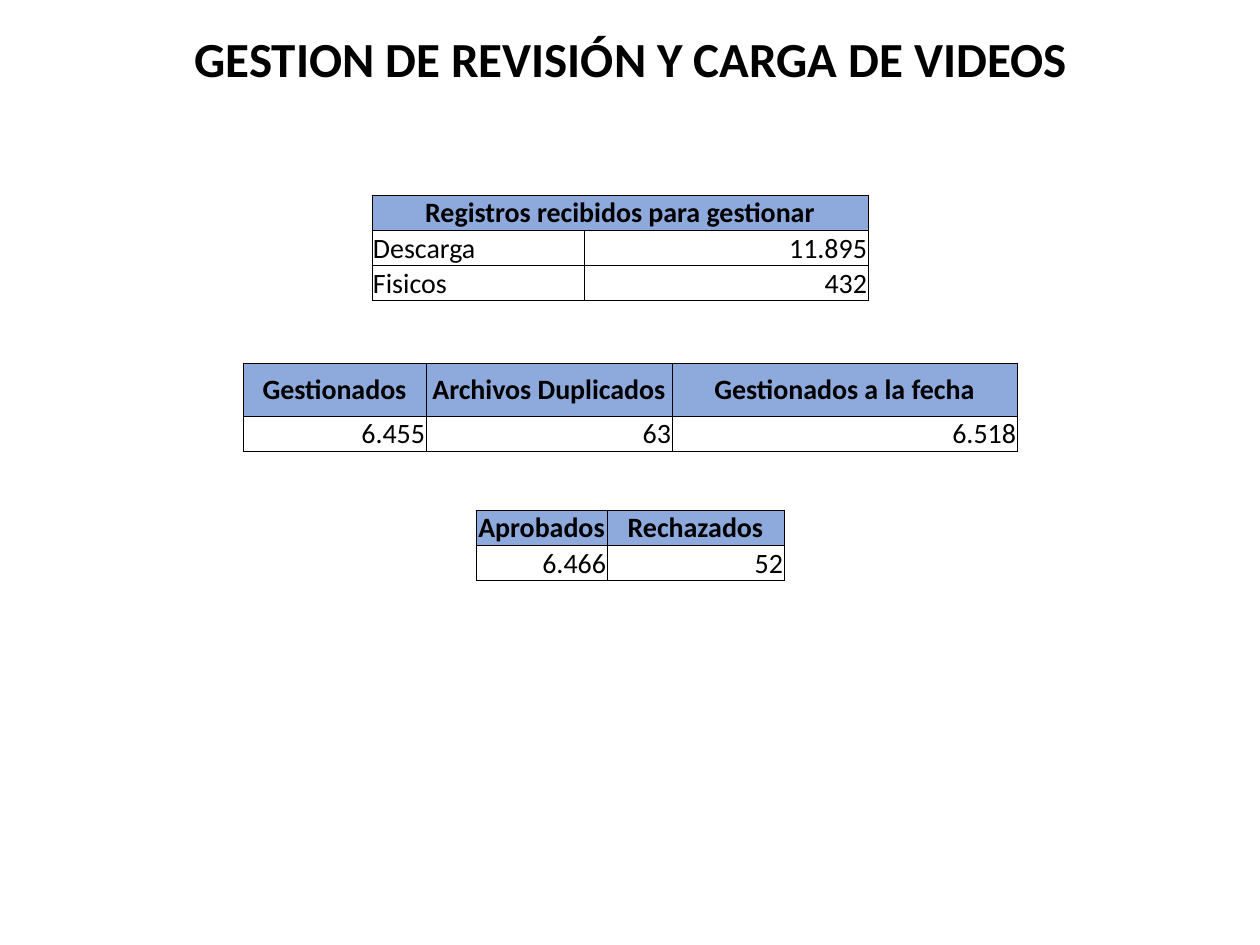
from lxml import etree
from pptx import Presentation
from pptx import util as u
from pptx.dml import color
from pptx.enum import text
from pptx.oxml import ns

FONT = "Calibri"
BLACK = "000000"
HEADER_BLUE = "8EA9DB"
LEFT, CENTER, RIGHT = text.PP_ALIGN.LEFT, text.PP_ALIGN.CENTER, text.PP_ALIGN.RIGHT
MIDDLE, BOTTOM = text.MSO_ANCHOR.MIDDLE, text.MSO_ANCHOR.BOTTOM


def px(length):
    return u.Emu(round(length * 914400 / 126))


def rgb(value):
    return color.RGBColor.from_string(value)


def style_para(para, align, size, bold):
    para.alignment = align
    para.font.name = FONT
    para.font.size = u.Pt(size)
    para.font.bold = bold
    para.font.color.rgb = rgb(BLACK)


def add_borders(cell):
    properties = cell._tc.get_or_add_tcPr()
    for index, side in enumerate(("lnL", "lnR", "lnT", "lnB")):
        line = etree.Element(ns.qn(f"a:{side}"), w=str(u.Pt(0.5)))
        fill = etree.SubElement(line, ns.qn("a:solidFill"))
        etree.SubElement(fill, ns.qn("a:srgbClr"), val=BLACK)
        properties.insert(index, line)


def fill_cell(cell, wording, align, anchor, header):
    cell.margin_left = cell.margin_right = cell.margin_top = px(1)
    cell.margin_bottom = 0
    cell.vertical_anchor = anchor
    if header:
        cell.fill.solid()
        cell.fill.fore_color.rgb = rgb(HEADER_BLUE)
    else:
        cell.fill.background()
    add_borders(cell)
    cell.text = wording
    style_para(cell.text_frame.paragraphs[0], align, 16, header)


def add_title(page, left, top, width, height, wording):
    title = page.shapes.title
    title.left, title.top, title.width, title.height = map(px, (left, top, width, height))
    title.fill.solid()
    title.fill.fore_color.rgb = rgb("FFFFFF")
    title.text_frame.text = wording
    title.text_frame.vertical_anchor = MIDDLE
    style_para(title.text_frame.paragraphs[0], CENTER, 28, True)


def add_count_table(page, left, top, widths, heights, rows, header_anchor=BOTTOM):
    frame = page.shapes.add_table(
        len(heights), len(widths), px(left), px(top), px(sum(widths)), px(sum(heights)))
    table = frame.table
    table.first_row = table.horz_banding = False
    for column, width in zip(table.columns, widths):
        column.width = px(width)
    for row, height in zip(table.rows, heights):
        row.height = px(height)
    for r, wordings in enumerate(rows):
        header = r == 0
        for c in range(len(widths)):
            wording = wordings[c] if c < len(wordings) else ""
            align = CENTER if header else LEFT if wording.isalpha() else RIGHT
            fill_cell(table.cell(r, c), wording, align, header_anchor if header else BOTTOM, header)
        if len(wordings) < len(widths):
            table.cell(r, 0).merge(table.cell(r, len(widths) - 1))


def main():
    deck = Presentation()
    deck.slide_width, deck.slide_height = px(1260), px(945)
    page = deck.slides.add_slide(deck.slide_layouts[5])
    add_title(page, 1, 26, 1259, 64, "GESTION DE REVISIÓN Y CARGA DE VIDEOS")
    add_count_table(page, 372, 195, (212, 284), (35, 35, 35), (
        ("Registros recibidos para gestionar",),
        ("Descarga", "11.895"),
        ("Fisicos", "432"),
    ))
    add_count_table(page, 243, 363, (183, 246, 345), (53, 35), (
        ("Gestionados", "Archivos Duplicados", "Gestionados a la fecha"),
        ("6.455", "63", "6.518"),
    ), MIDDLE)
    add_count_table(page, 476, 510, (131, 177), (35, 35), (
        ("Aprobados", "Rechazados"),
        ("6.466", "52"),
    ))
    deck.save("out.pptx")


if __name__ == "__main__":
    main()
